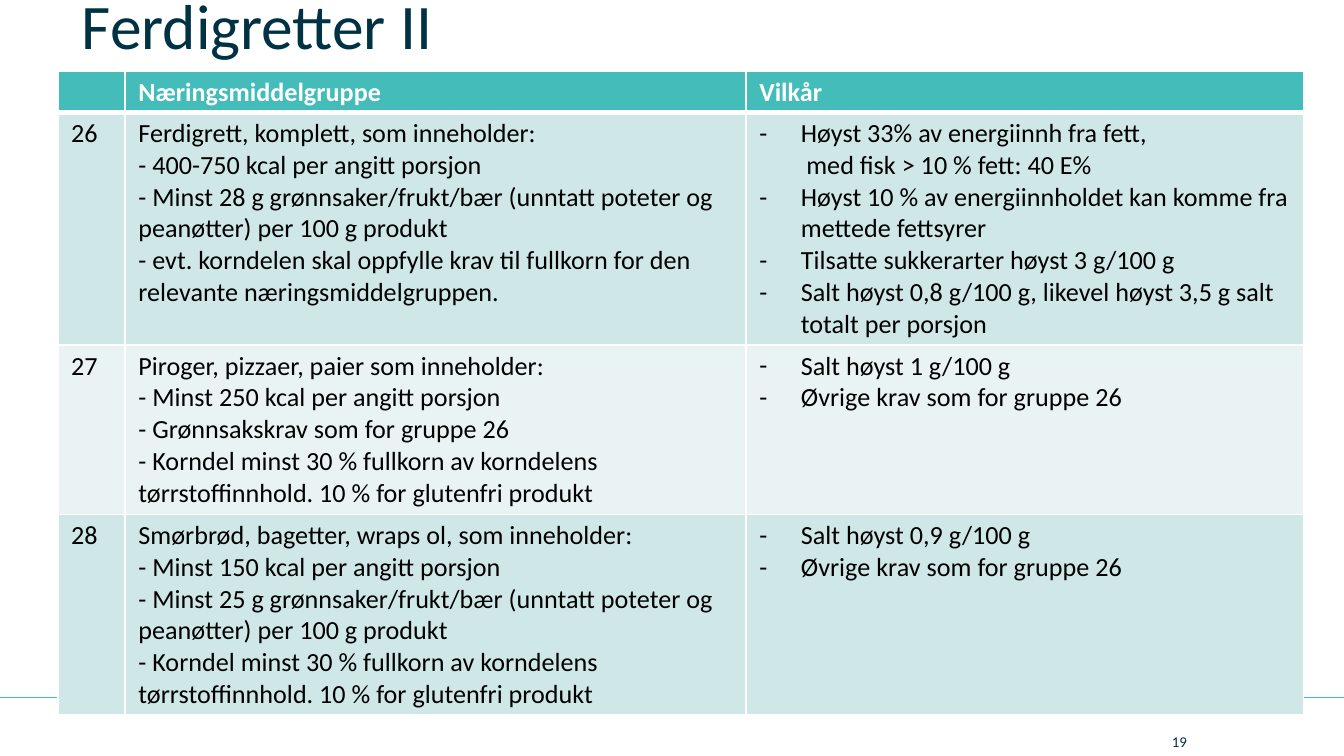
"""Build the slide on criteria for ready meals, groups 26 to 28."""
from dataclasses import dataclass

from lxml.etree import SubElement
from pptx import Presentation
from pptx.dml.color import RGBColor
from pptx.enum.shapes import MSO_CONNECTOR
from pptx.enum.text import MSO_ANCHOR, MSO_AUTO_SIZE, PP_ALIGN
from pptx.oxml import parse_xml
from pptx.oxml.ns import nsdecls, qn
from pptx.util import Inches, Pt

COLORS = {
    "teal": "43BCBA",
    "navy": "003244",
    "white": "FFFFFF",
    "black": "000000",
    "band": "CFE7E7",
    "light": "E9F3F3",
}
FONT = "Calibri"
COL_WIDTHS = (0.5, 4.62, 4.15)
HEADERS = ("", "Næringsmiddelgruppe", "Vilkår")
HEADER_HEIGHT = 0.3
HANG = 0.31
NOTE_INDENT = 0.35


@dataclass(frozen=True)
class Condition:
    text: str
    bullet: bool = True


@dataclass(frozen=True)
class FoodGroup:
    number: str
    height: float
    contents: tuple[str, ...]
    conditions: tuple[Condition, ...]


GRAIN = "- Korndel minst 30 % fullkorn av korndelens tørrstoffinnhold. 10 % for glutenfri produkt"
OTHER = Condition("Øvrige krav som for gruppe 26")
GROUPS = (
    FoodGroup("26", 1.73, (
        "Ferdigrett, komplett, som inneholder:",
        "- 400-750 kcal per angitt porsjon",
        "- Minst 28 g grønnsaker/frukt/bær (unntatt poteter og peanøtter) per 100 g produkt",
        "- evt. korndelen skal oppfylle krav til fullkorn for den relevante næringsmiddelgruppen.",
    ), (
        Condition("Høyst 33% av energiinnh fra fett,"),
        Condition("med fisk > 10 % fett: 40 E%", bullet=False),
        Condition("Høyst 10 % av energiinnholdet kan komme fra mettede fettsyrer"),
        Condition("Tilsatte sukkerarter høyst 3 g/100 g"),
        Condition("Salt høyst 0,8 g/100 g, likevel høyst 3,5 g salt totalt per porsjon"),
    )),
    FoodGroup("27", 1.26, (
        "Piroger, pizzaer, paier som inneholder:",
        "- Minst 250 kcal per angitt porsjon",
        "- Grønnsakskrav som for gruppe 26",
        GRAIN,
    ), (Condition("Salt høyst 1 g/100 g"), OTHER)),
    FoodGroup("28", 1.49, (
        "Smørbrød, bagetter, wraps ol, som inneholder:",
        "- Minst 150 kcal per angitt porsjon",
        "- Minst 25 g grønnsaker/frukt/bær (unntatt poteter og peanøtter) per 100 g produkt",
        GRAIN,
    ), (Condition("Salt høyst 0,9 g/100 g"), OTHER)),
)


def rgb(name: str) -> RGBColor:
    return RGBColor.from_string(COLORS[name])


def style_text(tf, size: float, color: str, bold: bool = False) -> None:
    for p in tf.paragraphs:
        for r in p.runs:
            r.font.name = FONT
            r.font.size = Pt(size)
            r.font.bold = bold
            r.font.color.rgb = rgb(color)


def indent(p, left: float, bullet: bool) -> None:
    pPr = p._p.get_or_add_pPr()
    pPr.set("marL", str(Inches(left)))
    pPr.set("indent", str(-Inches(left) if bullet else 0))
    if bullet:
        SubElement(pPr, qn("a:buFont")).set("typeface", FONT)
        SubElement(pPr, qn("a:buChar")).set("char", "-")
    else:
        SubElement(pPr, qn("a:buNone"))


def style_cell(cell, fill: str, top: float = 1, bottom: float = 1) -> None:
    cell.margin_left = cell.margin_right = Inches(0.1)
    cell.margin_top = cell.margin_bottom = Pt(2.7)
    cell.fill.solid()
    cell.fill.fore_color.rgb = rgb(fill)
    tcPr = cell._tc.get_or_add_tcPr()
    for i, (side, width) in enumerate(zip("LRTB", (1, 1, top, bottom))):
        tcPr.insert(i, parse_xml(
            f'<a:ln{side} {nsdecls("a")} w="{Pt(width)}"><a:solidFill>'
            f'<a:srgbClr val="{COLORS["white"]}"/></a:solidFill></a:ln{side}>'))


def add_title(s, text: str) -> None:
    sp = s.shapes.title
    sp.left, sp.top, sp.width, sp.height = map(Inches, (0.51, -0.17, 8.98, 0.68))
    tf = sp.text_frame
    tf.text = text
    tf.vertical_anchor = MSO_ANCHOR.BOTTOM
    tf.auto_size = MSO_AUTO_SIZE.SHAPE_TO_FIT_TEXT
    tf.paragraphs[0].alignment = PP_ALIGN.LEFT
    style_text(tf, 34, "navy")


def add_footer_line(s) -> None:
    y = Inches(5.19)
    line = s.shapes.add_connector(MSO_CONNECTOR.STRAIGHT, 0, y, Inches(10), y)
    line.line.color.rgb = rgb("teal")
    line.line.width = Pt(1)
    SubElement(line._element.spPr, qn("a:effectLst"))


def add_page_number(s, number: str) -> None:
    sp = s.shapes.add_textbox(*map(Inches, (8.62, 5.46, 0.71, 0.12)))
    tf = sp.text_frame
    tf.word_wrap = True
    tf.margin_top = tf.margin_bottom = 0
    tf.vertical_anchor = MSO_ANCHOR.MIDDLE
    tf.text = number
    style_text(tf, 8, "navy")


def add_criteria_table(s) -> None:
    heights = (HEADER_HEIGHT, *(group.height for group in GROUPS))
    table = s.shapes.add_table(
        len(heights), len(COL_WIDTHS), Inches(0.43), Inches(0.53),
        Inches(sum(COL_WIDTHS)), Inches(sum(heights))).table
    table.first_row = table.horz_banding = False
    for col, width in zip(table.columns, COL_WIDTHS):
        col.width = Inches(width)
    for row, height in zip(table.rows, heights):
        row.height = Inches(height)

    for cell, text in zip(table.rows[0].cells, HEADERS):
        style_cell(cell, "teal", bottom=3)
        cell.text_frame.text = text
        style_text(cell.text_frame, 14, "white", bold=True)
        if not text:
            SubElement(cell.text_frame.paragraphs[0]._p, qn("a:endParaRPr")).set("sz", "1400")

    for i, group in enumerate(GROUPS, start=1):
        cells = list(table.rows[i].cells)
        conditions = "\n".join(c.text for c in group.conditions)
        for cell, text in zip(cells, (group.number, "\n".join(group.contents), conditions)):
            style_cell(cell, "band" if i % 2 else "light", top=3 if i == 1 else 1)
            cell.text_frame.text = text
            style_text(cell.text_frame, 14, "black")
        for p, condition in zip(cells[2].text_frame.paragraphs, group.conditions):
            indent(p, HANG if condition.bullet else NOTE_INDENT, condition.bullet)


def main() -> None:
    prs = Presentation()
    prs.slide_width = Inches(10)
    prs.slide_height = prs.slide_width * 9 // 16
    s = prs.slides.add_slide(prs.slide_layouts[5])
    add_footer_line(s)
    add_title(s, "Ferdigretter II")
    add_criteria_table(s)
    add_page_number(s, "19")
    prs.save("out.pptx")


if __name__ == "__main__":
    main()
